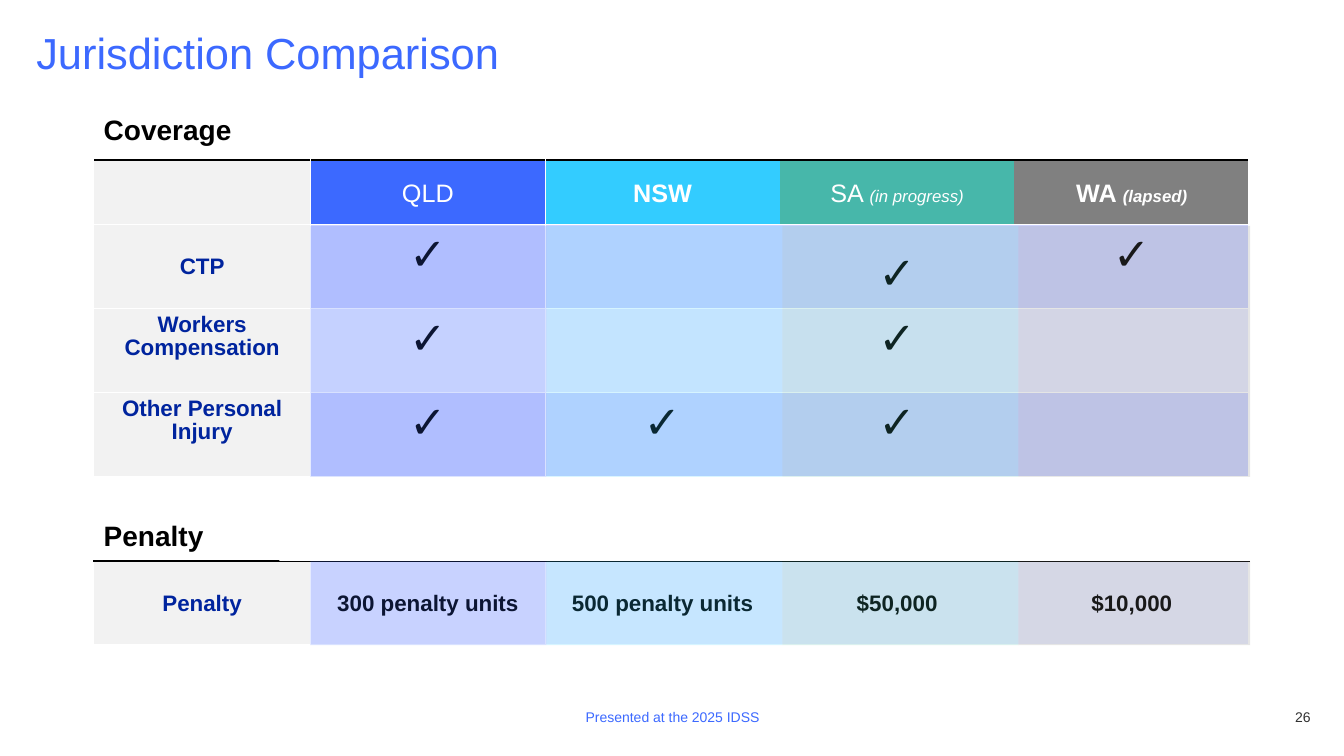
from dataclasses import dataclass
from lxml.etree import SubElement
from pptx import Presentation
from pptx.dml.color import RGBColor
from pptx.enum.shapes import MSO_SHAPE as Preset
from pptx.enum.text import MSO_ANCHOR as Anchor, PP_ALIGN as Align
from pptx.oxml.ns import qn
from pptx.util import Inches, Pt


@dataclass(frozen=True)
class Theme:
    font: str = "Arial"
    white: str = "FFFFFF"
    black: str = "000000"
    brand: str = "3C69FF"
    label: str = "00249E"
    label_fill: str = "F2F2F2"
    number: str = "323232"
    title_size: int = 31
    heading_size: int = 20
    header_size: int = 18
    body_size: int = 16
    note_size: int = 12
    footer_size: int = 10
    check_size: int = 32


THEME = Theme()
TITLE = "Jurisdiction Comparison"
FOOTER = "Presented at the 2025 IDSS"
PAGE = "26"
CHECK = "✓"
JURISDICTIONS = [
    ("QLD", "", False, "3C69FF"),
    ("NSW", "", True, "33CCFF"),
    ("SA ", "(in progress)", False, "47B7AA"),
    ("WA ", "(lapsed)", True, "808080"),
]
COVERAGE = [
    ("CTP", [CHECK, "", CHECK, CHECK], "CED4FF", 2),
    ("Workers Compensation", [CHECK, "", CHECK, ""], "E8EBFF", 0.93),
    ("Other Personal Injury", [CHECK, CHECK, CHECK, ""], "CED4FF", 0.93),
]
PENALTY = ("Penalty", ["300 penalty units", "500 penalty units", "$50,000", "$10,000"], "EBEDFF", 2)
LOWERED = ("CTP", 2)

SLIDE_WIDTH, SLIDE_HEIGHT = 13.33, 7.5
LEFT, TOP, WIDTH, HEIGHT = 0.93, 1.59, 11.46, 4.81
LABEL_WIDTH, HEADER_HEIGHT = 2.15, 0.64
ROWS, COLUMNS = len(COVERAGE) + 3, len(JURISDICTIONS) + 1
GAP_ROW, PENALTY_ROW = ROWS - 2, ROWS - 1
COLUMN_WIDTH = (WIDTH - LABEL_WIDTH) / (COLUMNS - 1)
ROW_HEIGHT = (HEIGHT - HEADER_HEIGHT) / (ROWS - 1)
TINT_LEFT, TINT_TOP, TINT_STEP, TINT_RIGHT = 3.08, 2.24, 2.34, 12.4
NO_STYLE = "{2D5ABB26-0587-4C30-8999-92F81FD0307C}"


def write(frame, text, *, size, color, bold=False, italic=False, align=Align.LEFT, spacing=None):
    paragraph = frame.paragraphs[0]
    paragraph.alignment = align
    if spacing:
        paragraph.line_spacing = spacing
    run = paragraph.add_run()
    run.text = text
    font = run.font
    font.name, font.size, font.bold, font.italic = THEME.font, Pt(size), bold, italic
    font.color.rgb = RGBColor.from_string(color)


def remove_insets(frame):
    frame.margin_left = frame.margin_right = frame.margin_top = frame.margin_bottom = 0


def add_text(slide, box, text, *, tight=False, **style):
    frame = slide.shapes.add_textbox(*map(Inches, box)).text_frame
    frame.word_wrap = True
    if tight:
        remove_insets(frame)
        frame.vertical_anchor = Anchor.BOTTOM
    write(frame, text, **style)


def add_panel(slide, box, color, opacity=100):
    shape = slide.shapes.add_shape(Preset.RECTANGLE, *map(Inches, box))
    shape.shadow.inherit = False
    shape.line.fill.background()
    shape.fill.solid()
    shape.fill.fore_color.rgb = RGBColor.from_string(color)
    if opacity < 100:
        tone = shape.fill._xPr.find(".//" + qn("a:srgbClr"))
        SubElement(tone, qn("a:alpha"), val=str(opacity * 1000))


def add_border(cell, side, color, points):
    line = SubElement(cell._tc.get_or_add_tcPr(), qn("a:" + side), w=str(Pt(points)))
    SubElement(SubElement(line, qn("a:solidFill")), qn("a:srgbClr"), val=color)


def format_cell(cell, row, column, fill):
    black_top, black_bottom = row in (0, PENALTY_ROW), row == GAP_ROW
    if column < 2:
        add_border(cell, "lnL", THEME.white, 1)
    if column in (0, COLUMNS - 1):
        add_border(cell, "lnR", THEME.white, 1)
    for side, is_black in (("lnT", black_top), ("lnB", black_bottom)):
        add_border(cell, side, THEME.black if is_black else THEME.white, 1.5 if is_black else 1)
    cell.fill.solid()
    cell.fill.fore_color.rgb = RGBColor.from_string(fill)


def fill_header(table):
    format_cell(table.cell(0, 0), 0, 0, THEME.label_fill)
    for column, (name, note, bold, color) in enumerate(JURISDICTIONS, 1):
        cell = table.cell(0, column)
        format_cell(cell, 0, column, color)
        style = dict(color=THEME.white, bold=bold, align=Align.CENTER, spacing=1.5)
        write(cell.text_frame, name, size=THEME.header_size, **style)
        if note:
            write(cell.text_frame, note, size=THEME.note_size, italic=True, **style)


def fill_row(table, row, label, values, fill, spacing):
    style = dict(bold=True, align=Align.CENTER)
    cell = table.cell(row, 0)
    format_cell(cell, row, 0, THEME.label_fill)
    write(cell.text_frame, label, size=THEME.body_size, color=THEME.label, spacing=spacing, **style)
    for column, value in enumerate(values, 1):
        cell = table.cell(row, column)
        format_cell(cell, row, column, fill)
        is_check = value == CHECK
        if (label, column - 1) == LOWERED:
            cell.margin_top, cell.margin_bottom = Inches(0.24), 0
        if value:
            write(cell.text_frame, value, color=THEME.black,
                  size=THEME.check_size if is_check else THEME.body_size,
                  spacing=None if is_check else spacing, **style)


def add_comparison(slide):
    box = map(Inches, (LEFT, TOP, WIDTH, HEIGHT))
    table = slide.shapes.add_table(ROWS, COLUMNS, *box).table
    table._tbl.tblPr.find(qn("a:tableStyleId")).text = NO_STYLE
    table.first_row = table.horz_banding = False
    for index, column in enumerate(table.columns):
        column.width = Inches(COLUMN_WIDTH if index else LABEL_WIDTH)
    for index, row in enumerate(table.rows):
        row.height = Inches(ROW_HEIGHT if index else HEADER_HEIGHT)
    fill_header(table)
    for row, entry in enumerate(COVERAGE, 1):
        fill_row(table, row, *entry)
    for column in range(COLUMNS):
        format_cell(table.cell(GAP_ROW, column), GAP_ROW, column, THEME.white)
    fill_row(table, PENALTY_ROW, *PENALTY)


def main():
    presentation = Presentation()
    presentation.slide_width, presentation.slide_height = Inches(SLIDE_WIDTH), Inches(SLIDE_HEIGHT)
    slide = presentation.slides.add_slide(presentation.slide_layouts[5])

    title = slide.shapes.title
    title.left, title.top, title.width, title.height = map(Inches, (0.36, 0.32, 12.64, 1.11))
    remove_insets(title.text_frame)
    title.text_frame.vertical_anchor = Anchor.TOP
    write(title.text_frame, TITLE, size=THEME.title_size, color=THEME.brand, spacing=0.9)

    add_comparison(slide)
    for index, (_, _, _, color) in enumerate(JURISDICTIONS):
        left = TINT_LEFT + index * TINT_STEP
        width = min(TINT_STEP, TINT_RIGHT - left)
        add_panel(slide, (left, TINT_TOP, width, TOP + HEIGHT - TINT_TOP), color, opacity=20)
    gap_top = TOP + HEADER_HEIGHT + len(COVERAGE) * ROW_HEIGHT
    add_panel(slide, (2.77, gap_top, 9.77, ROW_HEIGHT), THEME.white)

    for text, top in (("Coverage", 1.07), ("Penalty", 5.09)):
        add_text(slide, (LEFT, top, 3.78, 0.44), text,
                 size=THEME.heading_size, color=THEME.black, bold=True)
    add_text(slide, (4.42, 7, 4.5, 0.2), FOOTER, tight=True,
             size=THEME.footer_size, color=THEME.brand, align=Align.CENTER)
    add_text(slide, (12.54, 7, 0.46, 0.2), PAGE, tight=True,
             size=THEME.footer_size, color=THEME.number, align=Align.RIGHT)
    presentation.save("out.pptx")


if __name__ == "__main__":
    main()
